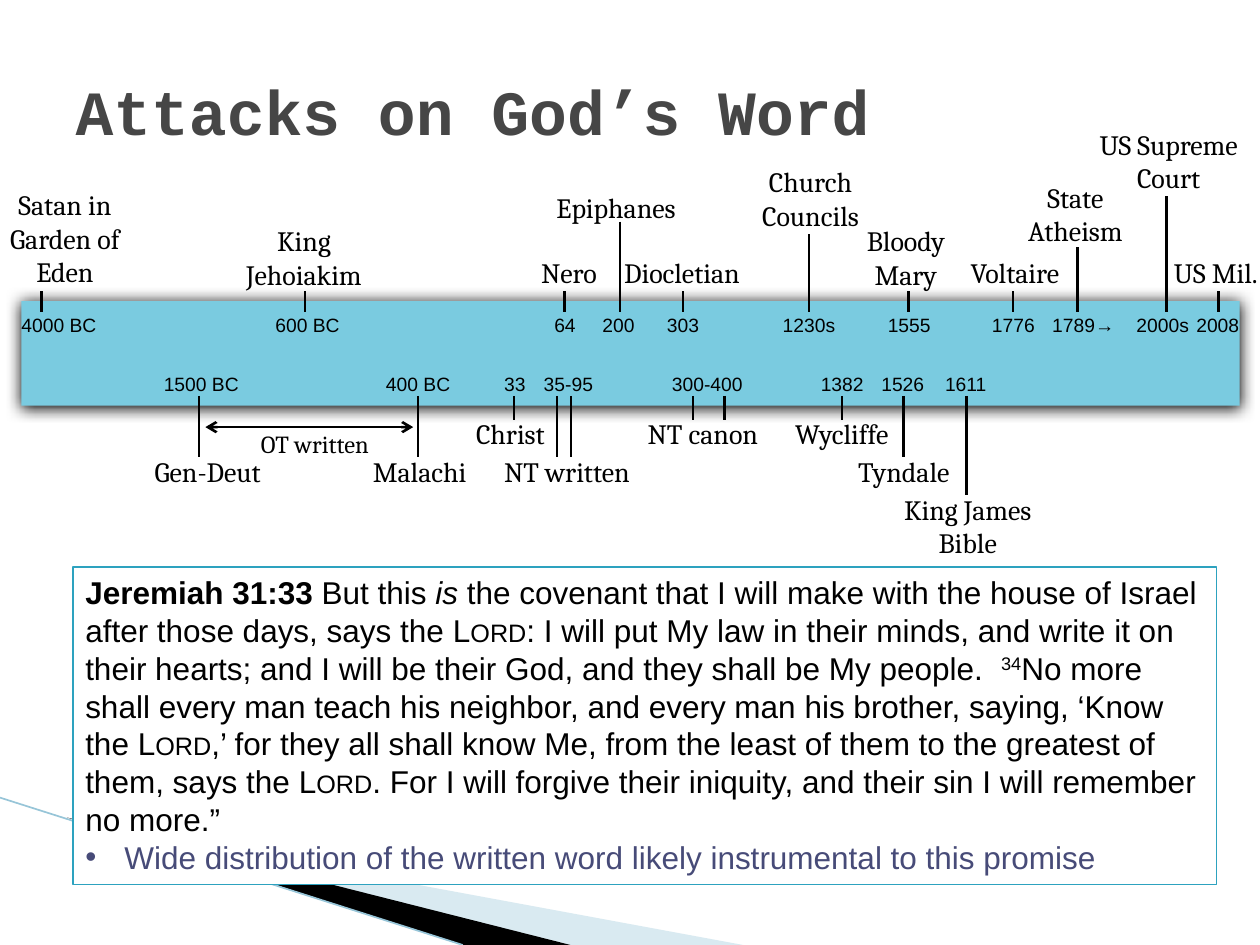
from lxml import etree
from pptx import Presentation
from pptx.dml.color import RGBColor
from pptx.enum import shapes, text
from pptx.oxml import parse_xml
from pptx.oxml.ns import nsdecls, qn
from pptx.util import Cm, Pt

BLACK = RGBColor(0x00, 0x00, 0x00)
WHITE = RGBColor(0xFF, 0xFF, 0xFF)
TITLE_GREY = RGBColor(0x46, 0x46, 0x46)
BAR_BLUE = RGBColor(0x7A, 0xCB, 0xE0)
BORDER_BLUE = RGBColor(0x2D, 0xA2, 0xBF)
SWOOSH_BLUE = RGBColor(0xA0, 0xCB, 0xDC)
EDGE_BLUE = RGBColor(0x97, 0xC5, 0xD8)
NOTE_PURPLE = RGBColor(0x47, 0x4B, 0x78)
DATE_WIDTH = 2.4

prs = Presentation()
prs.slide_width, prs.slide_height = Cm(25.4), Cm(19.05)
s = prs.slides.add_slide(prs.slide_layouts[5])


def add_label(words, center, top, width, size, font):
    sp = s.shapes.add_textbox(Cm(center - width / 2), Cm(top), Cm(width), Cm(0.94))
    tf = sp.text_frame
    tf.text = words
    tf.word_wrap = font == "Cambria" and " " in words
    tf.auto_size = text.MSO_AUTO_SIZE.SHAPE_TO_FIT_TEXT
    p = tf.paragraphs[0]
    p.alignment = text.PP_ALIGN.CENTER
    f = p.runs[0].font
    f.size, f.name, f.color.rgb = Pt(size), font, BLACK


def add_line(x1, y1, x2, y2, color=BLACK, width=1.5):
    line = s.shapes.add_connector(shapes.MSO_CONNECTOR.STRAIGHT,
                                  Cm(x1), Cm(y1), Cm(x2), Cm(y2))
    line.line.color.rgb, line.line.width = color, Pt(width)
    etree.SubElement(line._element.spPr, qn("a:effectLst"))
    return line


# Corner swooshes
swooshes = [
    (SWOOSH_BLUE, [(1.4, 16.54), (14.98, 19.05), (11.5, 19.05)]),
    (BLACK, [(1.35, 16.48), (11.5, 19.05), (9.32, 19.05)]),
]
for color, points in swooshes:
    corners = [(Cm(x), Cm(y)) for x, y in points]
    builder = s.shapes.build_freeform(*corners[0])
    builder.add_line_segments(corners[1:], close=True)
    sp = builder.convert_to_shape()
    sp.shadow.inherit = False
    sp.fill.solid()
    sp.fill.fore_color.rgb = color
    sp.line.fill.background()
    if color == SWOOSH_BLUE:
        clr = sp._element.spPr.find(".//" + qn("a:srgbClr"))
        etree.SubElement(clr, qn("a:alpha")).set("val", "40000")
add_line(0, 16.08, 9.33, 19.05, EDGE_BLUE, 0.95)

# Title
title = s.shapes.title
title.left, title.top, title.width, title.height = Cm(1.27), Cm(0.64), Cm(22.86), Cm(3.18)
tf = title.text_frame
tf.text = "Attacks on God’s Word"
tf.vertical_anchor = text.MSO_ANCHOR.MIDDLE
p = tf.paragraphs[0]
p.alignment = text.PP_ALIGN.LEFT
f = p.runs[0].font
f.size, f.name, f.bold, f.color.rgb = Pt(36), "Courier New", True, TITLE_GREY

# Timeline bar
bar = s.shapes.add_shape(shapes.MSO_SHAPE.RECTANGLE, Cm(0.43), Cm(6.07), Cm(24.56), Cm(2.11))
bar.fill.solid()
bar.fill.fore_color.rgb = BAR_BLUE
bar.line.fill.background()
bar._element.spPr.append(parse_xml(
    f'<a:effectLst {nsdecls("a")}><a:outerShdw blurRad="{Pt(8.5)}" dist="{Pt(1)}" '
    'dir="5400000" rotWithShape="0"><a:srgbClr val="000000"/></a:outerShdw></a:effectLst>'))

# Attacks above the bar: date, its centre, label, its centre, top, width, tick x, tick top
attacks = [
    ("4000 BC", 1.19, "Satan in Garden of Eden", 1.31, 3.66, 3.38, 0.84, 5.87),
    ("600 BC", 6.2, "King Jehoiakim", 6.13, 4.39, 3.18, 6.15, 5.87),
    ("64", 11.39, "Nero", 11.47, 5.03, 1.7, 11.38, 5.87),
    ("200", 12.47, "Epiphanes", 12.42, 3.71, 3.07, 12.5, 4.47),
    ("303", 13.77, "Diocletian", 13.75, 5.03, 2.97, 13.77, 5.87),
    ("1230s", 16.31, "Church Councils", 16.34, 3.2, 3.23, 16.31, 4.72),
    ("1555", 18.33, "Bloody Mary", 18.26, 4.39, 2.64, 18.31, 5.87),
    ("1776", 20.43, "Voltaire", 20.46, 5.03, 2.41, 20.42, 5.87),
    ("1789→", 21.84, "State Atheism", 21.68, 3.51, 3.02, 21.72, 4.98),
    ("2000s", 23.44, "US Supreme Court", 23.56, 2.44, 4.45, 23.52, 3.96),
    ("2008", 24.55, "US Mil.", 24.51, 5.03, 2.95, 24.56, 5.87),
]
for date, date_x, label, label_x, top, width, tick_x, tick_top in attacks:
    add_line(tick_x, tick_top, tick_x, 6.28)
    add_label(date, date_x, 6.2, DATE_WIDTH, 11, "Arial")
    add_label(label, label_x, top, width, 16, "Cambria")

# Scripture below the bar: date, its centre, label, its centre, top, tick positions
writings = [
    ("1500 BC", 4.06, "Gen-Deut", 4.19, 9.04, [4.01]),
    ("400 BC", 8.43, "Malachi", 8.46, 9.04, [8.43]),
    ("33", 10.38, "Christ", 10.29, 8.28, [10.36]),
    ("35-95", 11.46, "NT written", 11.43, 9.04, [11.23, 11.51]),
    ("300-400", 14.26, "NT canon", 14.17, 8.28, [13.97, 14.61]),
    ("1382", 16.98, "Wycliffe", 16.97, 8.28, [16.97]),
    ("1526", 18.2, "Tyndale", 18.22, 9.04, [18.21]),
    ("1611", 19.47, "King James Bible", 19.51, 9.8, [19.48]),
]
for date, date_x, label, label_x, top, ticks in writings:
    for x in ticks:
        add_line(x, 7.98, x, top + 0.18)
    add_label(date, date_x, 7.39, DATE_WIDTH, 11, "Arial")
    add_label(label, label_x, top, 3.56, 16, "Cambria")

# Span of the Old Testament
span = add_line(4.14, 8.61, 8.33, 8.61)
for end in ("a:headEnd", "a:tailEnd"):
    etree.SubElement(span.line._get_or_add_ln(), qn(end)).set("type", "arrow")
add_label("OT written", 6.35, 8.53, 3.81, 14, "Cambria")

# Scripture box
box = s.shapes.add_shape(shapes.MSO_SHAPE.RECTANGLE, Cm(1.47), Cm(11.43), Cm(23.06), Cm(6.4))
box.shadow.inherit = False
box.fill.solid()
box.fill.fore_color.rgb = WHITE
box.line.color.rgb, box.line.width = BORDER_BLUE, Pt(0.75)
tf = box.text_frame
tf.word_wrap = True
tf.vertical_anchor = text.MSO_ANCHOR.TOP
verse = [
    ("Jeremiah 31:33 ", "bold"),
    ("But this ", ""),
    ("is", "italic"),
    (" the covenant that I will make with the house of Israel after those days, "
     "says the ", ""),
    ("Lord", "small"),
    (": I will put My law in their minds, and write it on their hearts; and I will be "
     "their God, and they shall be My people.\u00a0 ", ""),
    ("34", "super"),
    ("No more shall every man teach his neighbor, and every man his brother, saying, "
     "‘Know the ", ""),
    ("Lord", "small"),
    (",’ for they all shall know Me, from the least of them to the greatest of them, "
     "says the ", ""),
    ("Lord", "small"),
    (". For I will forgive their iniquity, and their sin I will remember no more.”", ""),
]
p = tf.paragraphs[0]
for words, style in verse:
    r = p.add_run()
    r.text = words
    r.font.bold, r.font.italic = style == "bold", style == "italic"
    if style == "small":
        r._r.get_or_add_rPr().set("cap", "small")
    elif style == "super":
        r._r.get_or_add_rPr().set("baseline", "30000")

note = tf.add_paragraph()
note.text = "Wide distribution of the written word likely instrumental to this promise"
pPr = note._p.get_or_add_pPr()
pPr.set("marL", str(Cm(0.79)))
pPr.set("indent", str(-Cm(0.79)))
etree.SubElement(pPr, qn("a:buFont")).set("typeface", "Arial")
etree.SubElement(pPr, qn("a:buChar")).set("char", "•")
for p, color in ((tf.paragraphs[0], BLACK), (note, NOTE_PURPLE)):
    p.alignment = text.PP_ALIGN.LEFT
    for r in p.runs:
        r.font.size, r.font.name, r.font.color.rgb = Pt(18), "Arial", color

prs.save("out.pptx")
